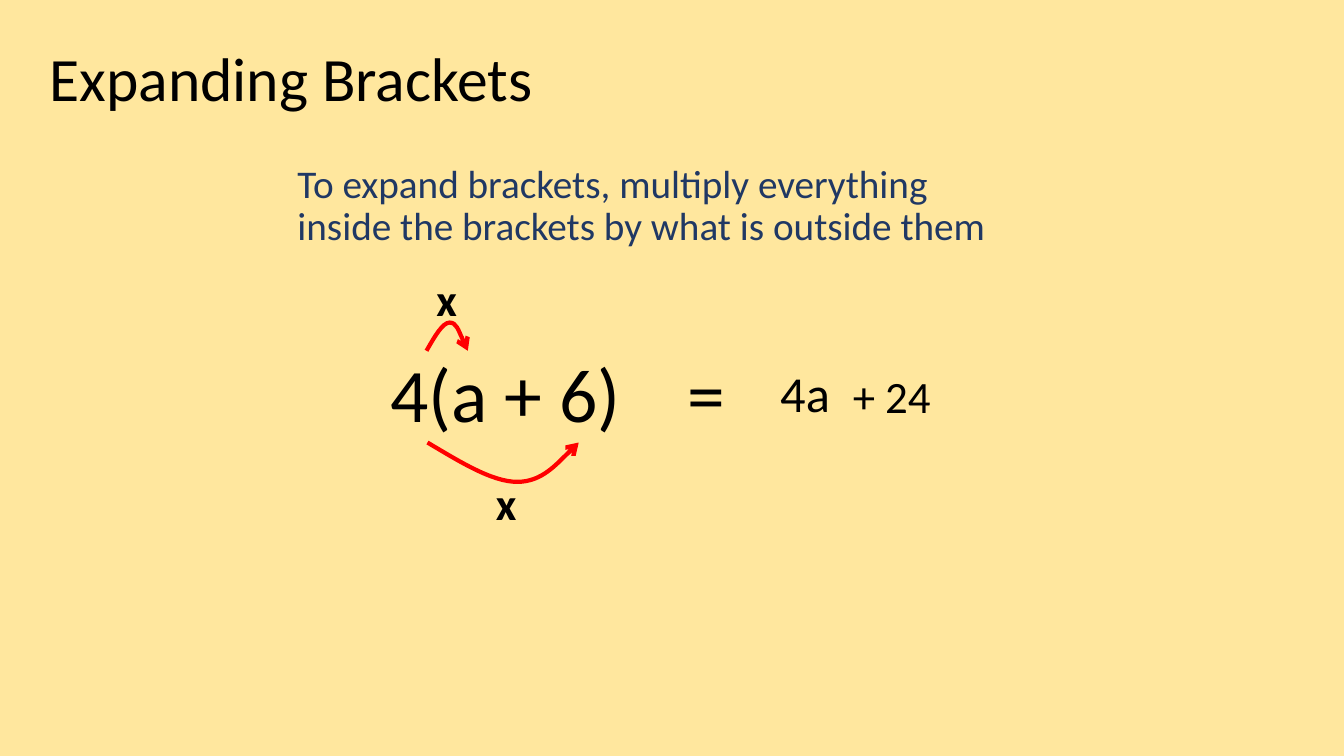
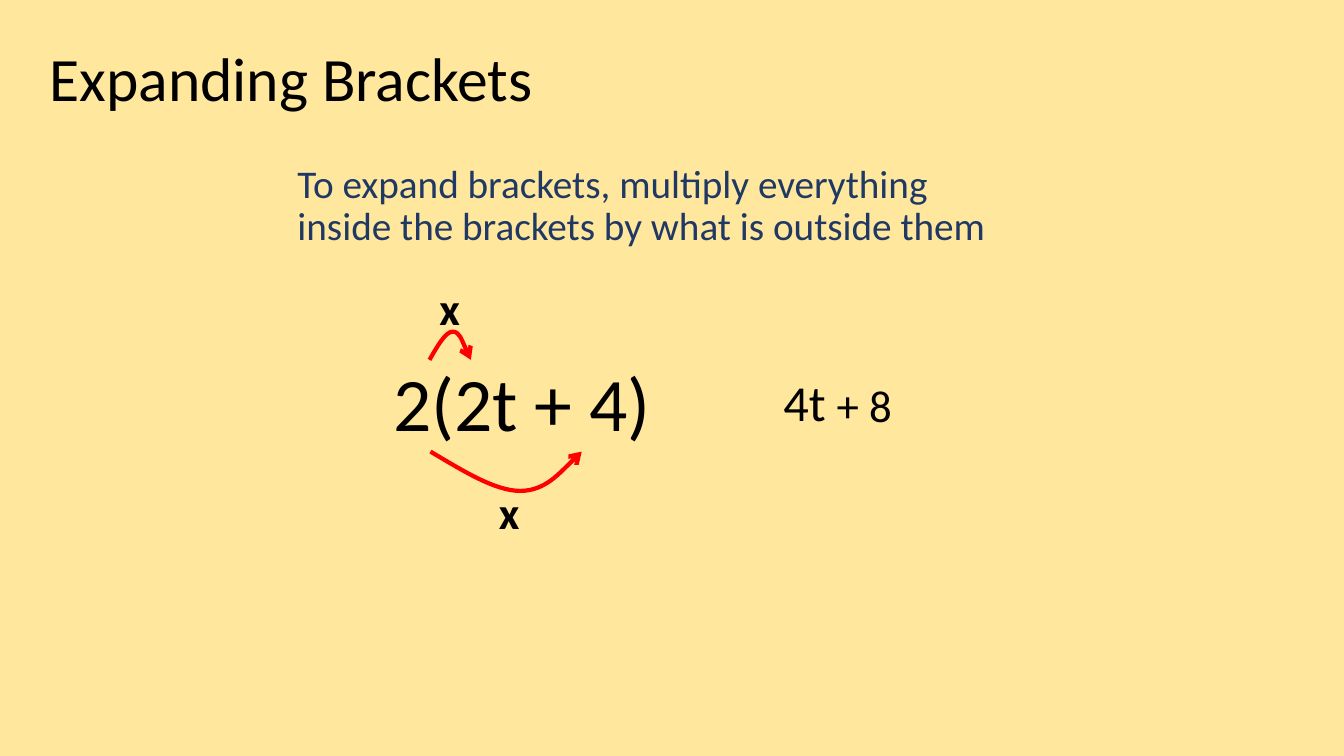
from lxml import etree
from pptx import Presentation
from pptx.dml.color import RGBColor
from pptx.enum.text import MSO_ANCHOR, MSO_AUTO_SIZE, PP_ALIGN
from pptx.oxml.ns import qn
from pptx.util import Inches, Pt

LEFT = PP_ALIGN.LEFT
MIDDLE, TOP = MSO_ANCHOR.MIDDLE, MSO_ANCHOR.TOP
FIXED = MSO_AUTO_SIZE.NONE
FONT = "Calibri"
COLORS = {"back": "FFE79E", "text": "000000", "rule": "203864", "arrow": "FF0000"}

TITLE = "Expanding Brackets"
RULE = "To expand brackets, multiply everything inside the brackets by what is outside them"
HOLDERS = [
    (0, (0.39, 0.18, 8.2, 1.25), TITLE, 44, "text", MIDDLE),
    (1, (2.76, 1.58, 7.41, 1.28), RULE, 28, "rule", TOP),
]
CURVES = [
    [(4.23, 3.48), (4.31, 3.34), (4.39, 3.2), (4.46, 3.2),
     (4.53, 3.2), (4.64, 3.48), (4.64, 3.48)],
    [(4.24, 4.39), (4.56, 4.58), (4.88, 4.78), (5.13, 4.78),
     (5.38, 4.78), (5.74, 4.39), (5.74, 4.39)],
]
SUMS = [
    (0, 0, [("4(a + 6)", 3.77, 3.39, 2.9, 54), ("=", 6.72, 3.39, 0.8, 54),
            ("4a", 7.64, 3.54, 0.85, 36), ("+ 24", 8.36, 3.61, 1.4, 32)]),
    (0.03, 0.09, [("2(2t + 4)", 3.77, 3.39, 2.9, 54),
                  ("4t", 7.64, 3.54, 0.85, 36), ("+ 8", 8.17, 3.61, 1.5, 32)]),
]
TIMES = [("x", 4.23, 2.65, 0.54, 32), ("x", 4.82, 4.67, 0.6, 32)]


def write(para, text, size, color, bold=False):
    run = para.add_run()
    run.text = text
    run.font.name = FONT
    run.font.size = Pt(size)
    run.font.bold = bold
    run.font.color.rgb = RGBColor.from_string(COLORS[color])


def curve(slide, points, dx, dy):
    spots = [(Inches(x + dx), Inches(y + dy)) for x, y in points]
    pen = slide.shapes.build_freeform(*spots[0])
    pen.add_line_segments(spots[1:], close=False)
    shape = pen.convert_to_shape()
    shape.shadow.inherit = False
    shape.fill.background()
    shape.line.color.rgb = RGBColor.from_string(COLORS["arrow"])
    shape.line.width = Pt(3)
    track = shape._element.find(".//" + qn("a:path"))
    for i, step in enumerate(track.findall(qn("a:lnTo"))):
        if i % 3 == 0:
            bend = etree.SubElement(track, qn("a:cubicBezTo"))
        bend.append(step[0])
        track.remove(step)
    etree.SubElement(shape.line._get_or_add_ln(), qn("a:tailEnd"), type="arrow")


prs = Presentation()
prs.slide_width = Inches(13.33)
prs.slide_height = Inches(7.5)
back = prs.slide_master.background.fill
back.solid()
back.fore_color.rgb = RGBColor.from_string(COLORS["back"])

layout = prs.slide_layouts[1]
for idx, place, text, size, color, anchor in HOLDERS:
    holder = layout.placeholders[idx]
    holder.left, holder.top, holder.width, holder.height = map(Inches, place)

for dx, dy, terms in SUMS:
    slide = prs.slides.add_slide(layout)
    for idx, place, text, size, color, anchor in HOLDERS:
        frame = slide.placeholders[idx].text_frame
        frame.auto_size = FIXED
        frame.word_wrap = True
        frame.vertical_anchor = anchor
        para = frame.paragraphs[0]
        if idx == 1:
            props = para._p.get_or_add_pPr()
            props.set("marL", str(Inches(0.09)))
            props.set("indent", "0")
            etree.SubElement(props, qn("a:buNone"))
        para.alignment = LEFT
        para.line_spacing = 0.9
        para.space_before = Pt(0)
        write(para, text, size, color)

    for points in CURVES:
        curve(slide, points, dx, dy)

    for text, x, y, width, size in terms + TIMES:
        box = slide.shapes.add_textbox(
            Inches(x + dx), Inches(y + dy), Inches(width), Inches(size / 60 + 0.11))
        box.text_frame.word_wrap = True
        write(box.text_frame.paragraphs[0], text, size, "text", text == "x")

prs.save("out.pptx")
